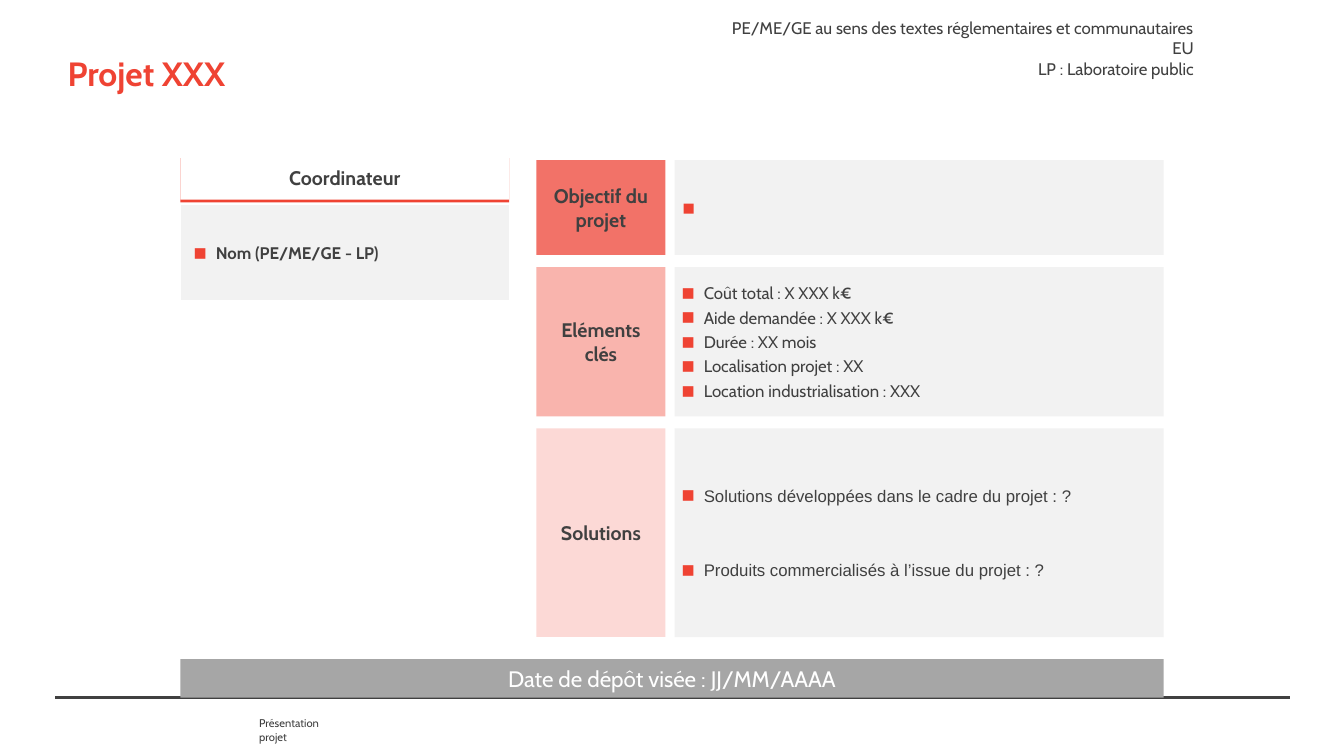
from dataclasses import dataclass, field
from typing import Any, NamedTuple

from lxml import etree
from pptx import Presentation
from pptx import util as u
from pptx.dml import color
from pptx.enum import shapes, text
from pptx.oxml import ns

RED, DARK, PALE, GREY, WHITE = "EF4333", "404040", "F2F2F2", "A6A6A6", "FFFFFF"
CENTER, RIGHT, LEFT = text.PP_ALIGN.CENTER, text.PP_ALIGN.RIGHT, text.PP_ALIGN.LEFT
MIDDLE, BOTTOM, TOP = text.MSO_ANCHOR.MIDDLE, text.MSO_ANCHOR.BOTTOM, text.MSO_ANCHOR.TOP


class Span(NamedTuple):
    start: float
    size: float


COLUMNS = {
    "coordinator": Span(1.79, 3.26),
    "labels": Span(5.32, 1.28),
    "panels": Span(6.69, 4.85),
    "date": Span(1.79, 9.75),
    "title": Span(0.67, 12),
    "legend": Span(7.06, 4.88),
    "footer": Span(2.57, 0.88),
    "marker": Span(6.78, 0.1),
}
ROWS = {
    "title": Span(0.3, 0.84),
    "legend": Span(0.13, 0.5),
    "heading": Span(1.54, 0.44),
    "name": Span(2.03, 0.96),
    "date": Span(6.54, 0.38),
    "footer": Span(7.11, 0.13),
    "marker": Span(2.02, 0.1),
}
SECTIONS_TOP, SECTION_GAP = 1.59, 0.12


@dataclass
class Style:
    size: float = 12
    ink: str = DARK
    bold: bool = False
    font: str = "Cabin"
    align: Any = CENTER
    anchor: Any = MIDDLE
    insets: tuple[float, float] = (0.1, 0.05)
    bulleted: bool = False
    gap: float = 0


@dataclass
class Section:
    label: str
    tint: str
    height: float
    items: list[str] = field(default_factory=list)
    font: str = "Cabin"
    gap: float = 0


SECTIONS = [
    Section("Objectif du projet", "F27268", 0.94),
    Section("Eléments\vclés", "F9B4AD", 1.48, [
        "Coût total : X XXX k€",
        "Aide demandée : X XXX k€",
        "Durée : XX mois",
        "Localisation projet : XX",
        "Location industrialisation : XXX",
    ]),
    Section("Solutions", "FCD9D6", 2.07, [
        "Solutions développées dans le cadre du projet : ?",
        "Produits commercialisés à l’issue du projet : ?",
    ], "Arial", 36),
]


def apply(target: Any, formats: dict[str, Any]) -> None:
    for name, value in formats.items():
        setattr(target, name, value)


def paint(fill: Any, tint: str) -> None:
    fill.solid()
    fill.fore_color.rgb = color.RGBColor.from_string(tint)


def area(column: Span, row: Span) -> dict[str, int]:
    return {
        "left": u.Inches(column.start), "top": u.Inches(row.start),
        "width": u.Inches(column.size), "height": u.Inches(row.size),
    }


def add_xml(parent: Any, tag: str, **attributes: str) -> Any:
    return etree.SubElement(parent, ns.qn(tag), attributes)


def add_bullet(paragraph: Any) -> None:
    properties = paragraph._p.get_or_add_pPr()
    apply(paragraph, {"space_after": u.Pt(3)})
    properties.set("marL", str(u.Inches(0.25)))
    properties.set("indent", str(u.Inches(-0.22)))
    add_xml(add_xml(properties, "a:buClr"), "a:srgbClr", val=RED)
    add_xml(properties, "a:buSzPct", val="130000")
    add_xml(properties, "a:buFont", typeface="Arial")
    add_xml(properties, "a:buChar", char="■")


def write(frame: Any, lines: list[str], style: Style) -> None:
    for index, line in enumerate(lines):
        paragraph = frame.paragraphs[0] if index == 0 else frame.add_paragraph()
        paragraph.text = line
        if style.bulleted:
            add_bullet(paragraph)
        apply(paragraph, {
            "alignment": style.align,
            "space_before": u.Pt(style.gap if index else 0),
        })
        for run in paragraph.runs:
            apply(run.font, {"size": u.Pt(style.size), "bold": style.bold, "name": style.font})
            paint(run.font.fill, style.ink)


def fill_text(holder: Any, lines: list[str], style: Style) -> None:
    across, down = map(u.Inches, style.insets)
    frame = holder.text_frame
    apply(frame, {
        "word_wrap": True, "auto_size": text.MSO_AUTO_SIZE.NONE,
        "vertical_anchor": style.anchor,
        "margin_left": across, "margin_right": across,
        "margin_top": down, "margin_bottom": down,
    })
    write(frame, lines, style)


def add_block(slide: Any, column: Span, row: Span, tint: str) -> Any:
    block = slide.shapes.add_shape(shapes.MSO_SHAPE.RECTANGLE, **area(column, row))
    block.shadow.inherit = False
    paint(block.fill, tint)
    block.line.fill.background()
    return block


def add_note(slide: Any, place: str, lines: list[str], style: Style) -> None:
    note = slide.shapes.add_textbox(**area(COLUMNS[place], ROWS[place]))
    fill_text(note, lines, style)


def add_footer(slide: Any) -> None:
    rule = slide.shapes.add_connector(
        shapes.MSO_CONNECTOR.STRAIGHT, *map(u.Inches, (0.55, 6.92, 12.79, 6.92)))
    rule.line.width = u.Pt(1.5)
    paint(rule.line.fill, DARK)
    add_xml(rule._element.spPr, "a:effectLst")
    add_note(slide, "footer", ["Présentation projet"],
             Style(8, align=LEFT, anchor=TOP, insets=(0, 0)))


def add_coordinator(slide: Any) -> None:
    column = COLUMNS["coordinator"]
    heading = add_block(slide, column, ROWS["heading"], WHITE)
    effects = heading._element.spPr.find(ns.qn("a:effectLst"))
    shadow = add_xml(effects, "a:outerShdw", dist=str(u.Pt(2)), dir="5400000",
                     algn="t", rotWithShape="0")
    add_xml(shadow, "a:srgbClr", val=RED)
    fill_text(heading, ["Coordinateur"], Style(14, bold=True, anchor=BOTTOM, insets=(0.1, 0.1)))
    table = slide.shapes.add_table(1, 1, **area(column, ROWS["name"])).table
    apply(table, {"first_row": False, "horz_banding": False})
    partner = table.cell(0, 0)
    partner.vertical_anchor = MIDDLE
    write(partner.text_frame, ["Nom (PE/ME/GE - LP)"], Style(bold=True, align=LEFT, bulleted=True))
    border = add_xml(partner._tc.get_or_add_tcPr(), "a:lnB", w=str(u.Pt(3)))
    add_xml(add_xml(border, "a:solidFill"), "a:srgbClr", val=WHITE)
    paint(partner.fill, PALE)


def add_sections(slide: Any) -> None:
    bodies = iter([holder for holder in slide.placeholders if holder.placeholder_format.idx in (1, 2)])
    top = SECTIONS_TOP
    for section in SECTIONS:
        row = Span(top, section.height)
        label = add_block(slide, COLUMNS["labels"], row, section.tint)
        fill_text(label, [section.label], Style(14, bold=True, insets=(0, 0)))
        if section.items:
            panel = next(bodies)
            apply(panel, area(COLUMNS["panels"], row))
            paint(panel.fill, PALE)
            fill_text(panel, section.items, Style(
                font=section.font, align=LEFT, insets=(0.04, 0.04), bulleted=True, gap=section.gap))
        else:
            add_block(slide, COLUMNS["panels"], row, PALE)
            add_block(slide, COLUMNS["marker"], ROWS["marker"], RED)
        top += section.height + SECTION_GAP


def main() -> None:
    deck = Presentation()
    apply(deck, {"slide_width": u.Inches(13.33), "slide_height": u.Inches(7.5)})
    slide = deck.slides.add_slide(deck.slide_layouts.get_by_name("Two Content"))
    title = slide.shapes.title
    apply(title, area(COLUMNS["title"], ROWS["title"]))
    fill_text(title, ["Projet XXX"], Style(24, RED, True, align=LEFT, insets=(0, 0.05)))
    add_footer(slide)
    add_coordinator(slide)
    add_sections(slide)
    date = add_block(slide, COLUMNS["date"], ROWS["date"], GREY)
    fill_text(date, ["Date de dépôt visée : JJ/MM/AAAA"], Style(16, WHITE))
    add_note(slide, "legend", [
        "PE/ME/GE au sens des textes réglementaires et communautaires EU",
        "LP : Laboratoire public",
    ], Style(align=RIGHT, anchor=TOP))
    deck.save("out.pptx")


if __name__ == "__main__":
    main()
